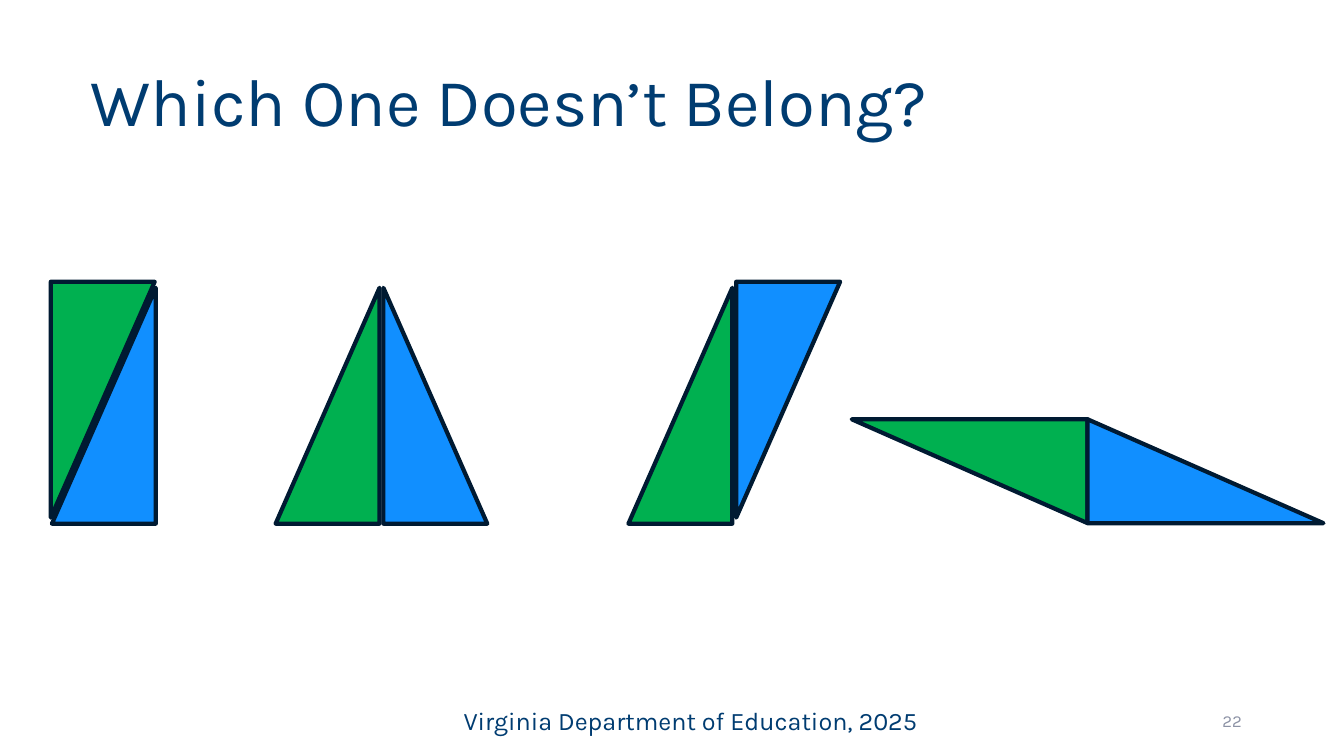
from pptx import Presentation
from pptx.dml.color import RGBColor
from pptx.enum.shapes import MSO_SHAPE as Shape
from pptx.enum.text import MSO_ANCHOR as Anchor, MSO_AUTO_SIZE as AutoSize, PP_ALIGN as Align
from pptx.oxml.ns import qn
from pptx.util import Pt

FONT = "Karla"
NAVY, GREY, OUTLINE = "003C71", "8C92A5", "001A32"
GREEN, BLUE = "00B050", "118FFF"
LONG_LEG, SHORT_LEG = 168.5, 74.2
HIGH, MIDDLE, LOW = 285.5, 289.8, 336.6
TRIANGLES = [
    (73.4, HIGH, 90, False, GREEN),
    (74.2, MIDDLE, 270, False, BLUE),
    (234, MIDDLE, 270, False, GREEN),
    (311, MIDDLE, 90, True, BLUE),
    (486, MIDDLE, 270, False, GREEN),
    (563, HIGH, 90, False, BLUE),
    (692.6, LOW, 180, False, GREEN),
    (861.1, LOW, 0, False, BLUE),
]


def color(hex_value):
    """Turn a hex string into a colour."""
    return RGBColor.from_string(hex_value)


def set_all(target, values):
    """Set every attribute named in a dict."""
    for name, value in values.items():
        setattr(target, name, value)


def place(box, left, top, width, height):
    """Position a shape, with lengths in points."""
    set_all(box, {"left": Pt(left), "top": Pt(top), "width": Pt(width), "height": Pt(height)})


def write(box, text, size, hex_value, frame_format, para_format):
    """Fill a box with one formatted paragraph."""
    frame = box.text_frame
    set_all(frame, {"word_wrap": True, **frame_format})
    para = frame.paragraphs[0]
    set_all(para, para_format)
    span = para.add_run()
    span.text = text
    set_all(span.font, {"name": FONT, "size": Pt(size), "bold": False})
    span.font.color.rgb = color(hex_value)


def add_title(page, text):
    """Format the title placeholder across the top of the page."""
    place(page.shapes.title, 0, 0, 960, 104.4)
    frame_format = {
        "vertical_anchor": Anchor.BOTTOM,
        "auto_size": AutoSize.NONE,
        "margin_left": Pt(64.8),
        "margin_right": Pt(7.2),
        "margin_top": Pt(3.6),
        "margin_bottom": Pt(3.6),
    }
    write(page.shapes.title, text, 48, NAVY, frame_format,
          {"alignment": Align.LEFT, "line_spacing": 0.9})


def add_label(page, text, left, width, size, hex_value, frame_format, alignment):
    """Add a text box on the footer line."""
    box = page.shapes.add_textbox(Pt(left), Pt(500.4), Pt(width), Pt(28.8))
    write(box, text, size, hex_value, frame_format, {"alignment": alignment})


def add_triangle(page, center_x, center_y, rotation, mirrored, hex_value):
    """Add an outlined right triangle turned about its centre."""
    triangle = page.shapes.add_shape(
        Shape.RIGHT_TRIANGLE, Pt(center_x - LONG_LEG / 2), Pt(center_y - SHORT_LEG / 2),
        Pt(LONG_LEG), Pt(SHORT_LEG))
    triangle.rotation = rotation
    triangle.shadow.inherit = False
    triangle.fill.solid()
    triangle.fill.fore_color.rgb = color(hex_value)
    triangle.line.color.rgb = color(OUTLINE)
    triangle.line.width = Pt(3)
    if mirrored:
        triangle.element.spPr.find(qn("a:xfrm")).set("flipH", "1")


def main():
    """Build and save the slide."""
    deck = Presentation()
    set_all(deck, {"slide_width": Pt(960), "slide_height": Pt(540)})
    page = deck.slides.add_slide(deck.slide_layouts[5])
    add_title(page, "Which One Doesn’t Belong?")
    add_label(page, "Virginia Department of Education, 2025", 324, 480, 18, NAVY,
              {"auto_size": AutoSize.SHAPE_TO_FIT_TEXT}, Align.LEFT)
    add_label(page, "22", 678.2, 216, 12, GREY,
              {"vertical_anchor": Anchor.MIDDLE}, Align.RIGHT)
    for triangle in TRIANGLES:
        add_triangle(page, *triangle)
    deck.save("out.pptx")


if __name__ == "__main__":
    main()
